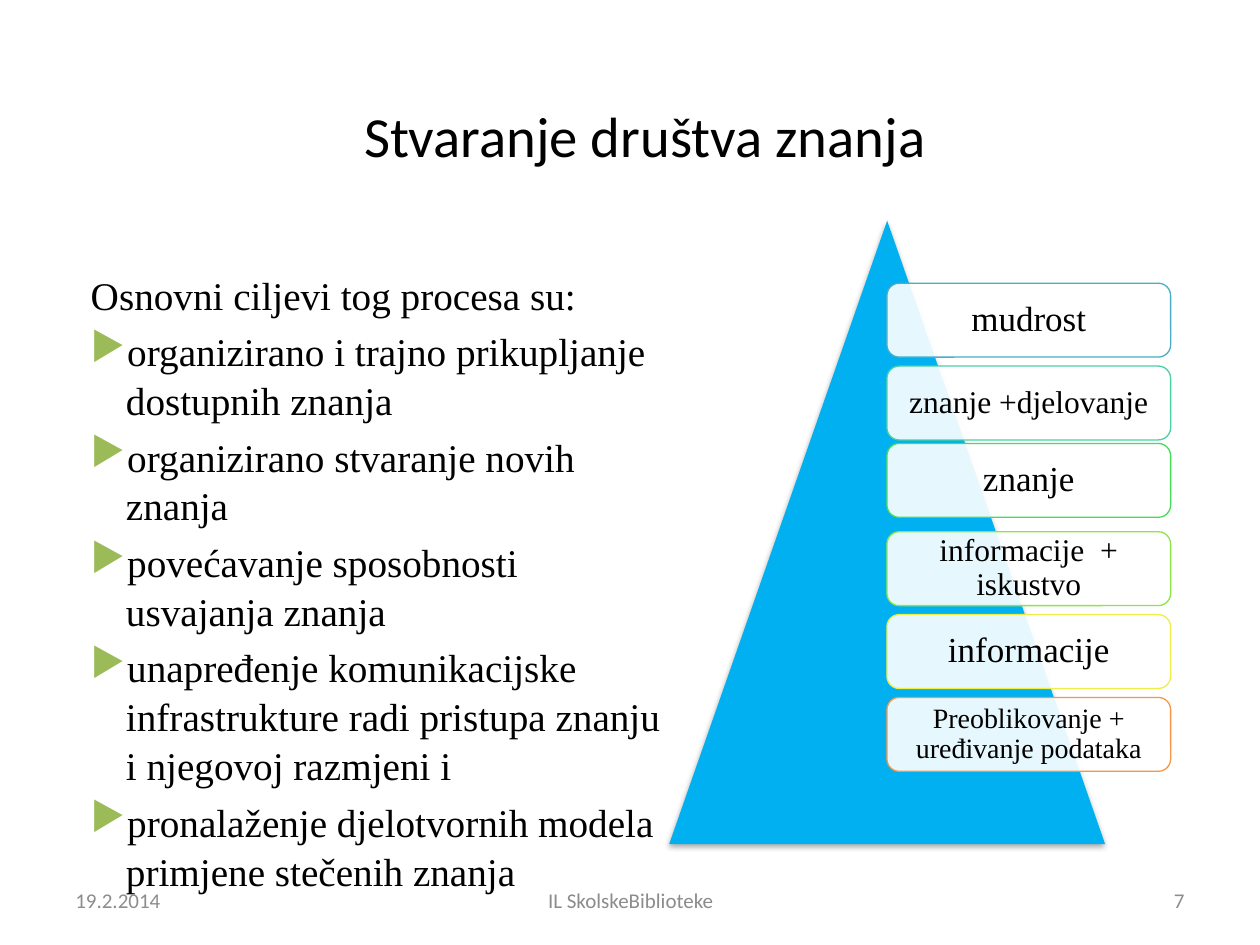
from lxml import etree
from pptx import Presentation
from pptx.dml.color import RGBColor
from pptx.enum.shapes import MSO_SHAPE
from pptx.enum.text import MSO_ANCHOR, PP_ALIGN
from pptx.oxml.ns import qn
from pptx.util import Cm, Pt

TRIANGLE = MSO_SHAPE.ISOSCELES_TRIANGLE
ROUNDED = MSO_SHAPE.ROUNDED_RECTANGLE
MIDDLE, TOP = MSO_ANCHOR.MIDDLE, MSO_ANCHOR.TOP
LEFT, CENTER, RIGHT = PP_ALIGN.LEFT, PP_ALIGN.CENTER, PP_ALIGN.RIGHT
SERIF, SANS = "Times New Roman", "Calibri"
BLACK, GRAY, WHITE = "000000", "8C8C8C", "FFFFFF"

INTRODUCTION = "Osnovni ciljevi tog procesa su:"
GOALS = [
    "organizirano i trajno prikupljanje dostupnih znanja",
    "organizirano stvaranje novih znanja",
    "povećavanje sposobnosti usvajanja znanja",
    "unapređenje komunikacijske infrastrukture radi pristupa znanju i njegovoj razmjeni i",
    "pronalaženje djelotvornih modela primjene stečenih znanja",
]
LEVELS = [
    ("mudrost", 20, "4BACC6", 0),
    ("znanje +djelovanje", 18, "49D1A3", 0),
    ("znanje", 20, "47DC57", -0.11),
    ("informacije  + iskustvo", 18, "8DE646", 0),
    ("informacije", 20, "EEEF46", 0),
    ("Preoblikovanje + uređivanje podataka", 16, "F79646", 0),
]
FIRST_LEVEL_TOP, LEVEL_STEP = 5.71, 1.67


def color(value):
    """Turn a hex string into a colour."""
    return RGBColor.from_string(value)


def add_element(parent, tag, **attributes):
    """Append a drawing element with the given attributes."""
    element = etree.SubElement(parent, qn(tag))
    for name, value in attributes.items():
        element.set(name, str(value))
    return element


def format_paragraph(paragraph, size, font, ink, alignment):
    """Set the alignment and the font of all runs."""
    paragraph.alignment = alignment
    for run in paragraph.runs:
        run.font.size = Pt(size)
        run.font.name = font
        run.font.color.rgb = color(ink)


def add_text(slide, box, lines, size, font, ink=BLACK, alignment=LEFT, anchor=MIDDLE):
    """Add a wrapped text box and return its paragraphs."""
    text_frame = slide.shapes.add_textbox(*map(Cm, box)).text_frame
    text_frame.word_wrap = True
    text_frame.vertical_anchor = anchor
    text_frame.text = "\n".join(lines)
    for paragraph in text_frame.paragraphs:
        format_paragraph(paragraph, size, font, ink, alignment)
    return text_frame.paragraphs


def add_goals(slide):
    """Add the introduction and the bulleted goals."""
    paragraphs = add_text(slide, (1.27, 5.3, 12.42, 12.32), [INTRODUCTION] + GOALS,
                          22.4, SERIF, anchor=TOP)
    for index, paragraph in enumerate(paragraphs):
        paragraph.space_before = Pt(4.4)
        paragraph.line_spacing = 1.04
        properties = paragraph._p.get_or_add_pPr()
        properties.set("marL", str(Cm(1.02)))
        properties.set("indent", str(Cm(-0.71)))
        if index:
            bullet_color = add_element(properties, "a:buClr")
            add_element(bullet_color, "a:srgbClr", val="9BBB59")
            add_element(properties, "a:buChar", char="▶")
        else:
            add_element(properties, "a:buNone")


def add_pyramid(slide):
    """Add the blue triangle with its soft shadow."""
    triangle = slide.shapes.add_shape(TRIANGLE, Cm(13.49), Cm(4.45), Cm(8.79), Cm(12.57))
    triangle.fill.solid()
    triangle.fill.fore_color.rgb = color("00B0F0")
    triangle.line.fill.background()
    triangle.shadow.inherit = False
    effects = triangle._element.spPr.find(qn("a:effectLst"))
    shadow = add_element(effects, "a:outerShdw", blurRad=Pt(3.1), dist=Pt(1.8),
                         dir=5400000, rotWithShape=0)
    shadow_color = add_element(shadow, "a:srgbClr", val=BLACK)
    add_element(shadow_color, "a:alpha", val=35000)


def add_level(slide, top, label, size, outline):
    """Add one translucent level box with its label."""
    level = slide.shapes.add_shape(ROUNDED, Cm(17.88), Cm(top), Cm(5.72), Cm(1.49))
    level.shadow.inherit = False
    level.fill.solid()
    level.fill.fore_color.rgb = color(WHITE)
    fill_color = level._element.spPr.find(qn("a:solidFill"))[0]
    add_element(fill_color, "a:alpha", val=90000)
    level.line.color.rgb = color(outline)
    level.line.width = Pt(0.75)
    text_frame = level.text_frame
    text_frame.word_wrap = True
    text_frame.vertical_anchor = MIDDLE
    text_frame.margin_left = text_frame.margin_right = Cm(0.12)
    text_frame.margin_top = text_frame.margin_bottom = Cm(0.12)
    text_frame.text = label
    paragraph = text_frame.paragraphs[0]
    paragraph.line_spacing = 0.9
    format_paragraph(paragraph, size, SERIF, BLACK, CENTER)


def add_footer(slide, left, width, text, alignment):
    """Add one gray footer entry."""
    add_text(slide, (left, 17.65, width, 1.01), [text], 12, SANS, GRAY, alignment)


def main():
    """Build and save the slide."""
    presentation = Presentation()
    presentation.slide_width, presentation.slide_height = Cm(25.4), Cm(19.05)
    slide = presentation.slides.add_slide(presentation.slide_layouts[6])
    add_text(slide, (1.57, 1.32, 22.86, 2.79), ["Stvaranje društva znanja"],
             32.4, SANS, alignment=CENTER)
    add_goals(slide)
    add_pyramid(slide)
    for index, (label, size, outline, shift) in enumerate(LEVELS):
        top = FIRST_LEVEL_TOP + index * LEVEL_STEP + shift
        add_level(slide, top, label, size, outline)
    add_footer(slide, 8.69, 8.05, "IL SkolskeBiblioteke", CENTER)
    add_footer(slide, 18.21, 5.92, "7", RIGHT)
    add_footer(slide, 1.27, 5.92, "19.2.2014", LEFT)
    presentation.save("out.pptx")


if __name__ == "__main__":
    main()
